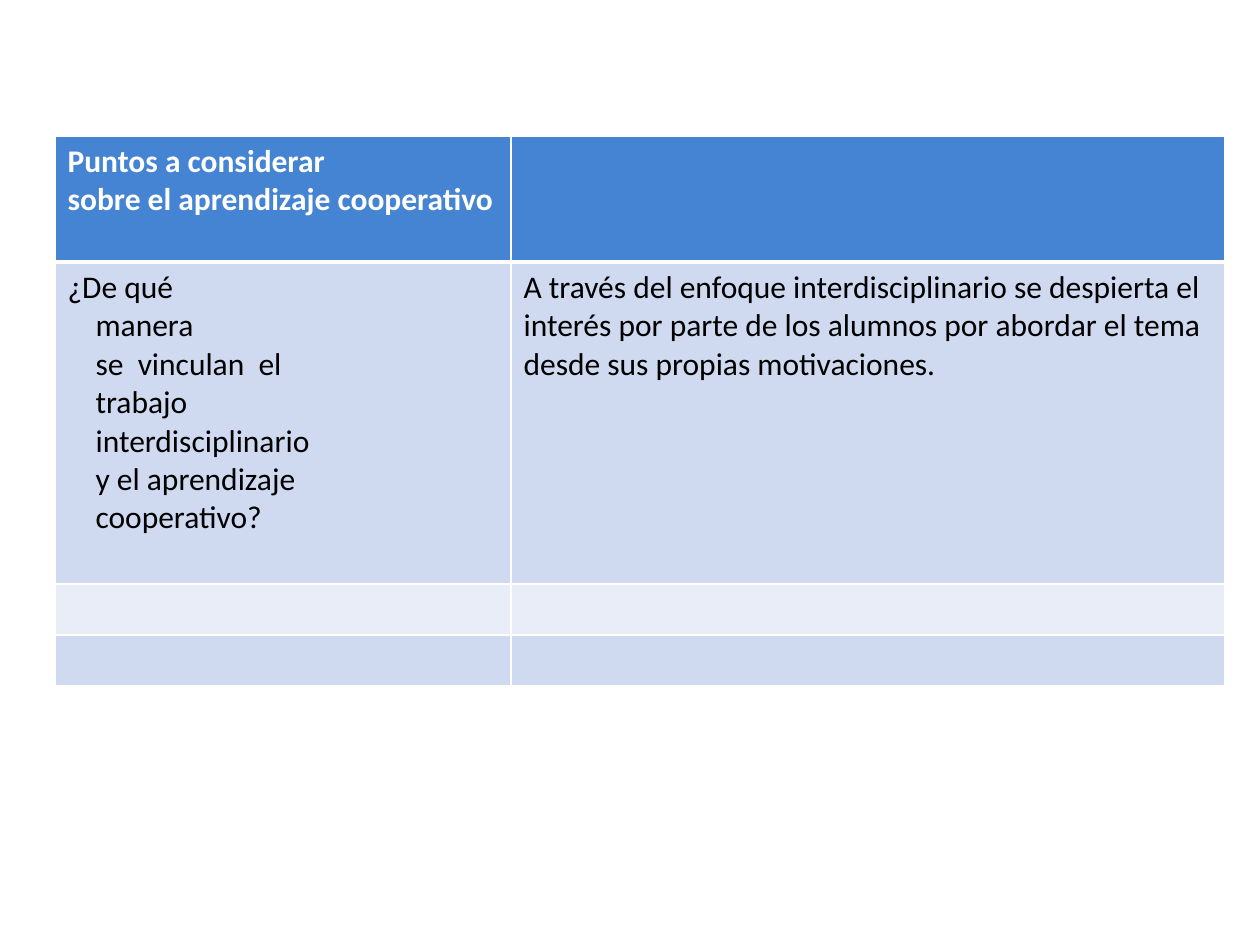
from lxml import etree
from pptx import Presentation, util as u
from pptx.dml.color import RGBColor
from pptx.oxml.ns import qn

PX = 914400 // 126
WHITE = RGBColor(0xFF, 0xFF, 0xFF)
BLACK = RGBColor(0, 0, 0)
BLUE = RGBColor(0x45, 0x84, 0xD3)
PALE = RGBColor(0xCF, 0xD9, 0xEF)
LIGHT = RGBColor(0xE9, 0xED, 0xF7)

HEAD = {"bold": True, "color": WHITE}
BODY = {"bold": False, "color": BLACK}
INDENT = 28

# Cell texts: one list of (indent, line) per cell
TOPIC = [(0, "Puntos a considerar"), (0, "sobre el aprendizaje cooperativo")]
QUERY = [(0, "¿De qué")] + [(INDENT, line) for line in (
    "manera", "se  vinculan  el", "trabajo", "interdisciplinario",
    "y el aprendizaje", "cooperativo?")]
REPLY = [(0, "A través del enfoque interdisciplinario se despierta el interés "
             "por parte de los alumnos por abordar el tema desde sus propias "
             "motivaciones.")]

# Rows: height, fill, text format, cells
ROWS = [
    (126, BLUE, HEAD, [TOPIC, []]),
    (322, PALE, BODY, [QUERY, REPLY]),
    (51, LIGHT, BODY, [[], []]),
    (51, PALE, BODY, [[], []]),
]


class Deck:
    font = {"name": "Calibri", "size": u.Pt(18)}

    def __init__(self, wide, high):
        self.prs = Presentation()
        self.prs.slide_width = wide * PX
        self.prs.slide_height = high * PX
        self.slide = self.prs.slides.add_slide(self.prs.slide_layouts[6])

    def table(self, left, top, cols, rows):
        high = sum(row[0] for row in rows)
        grid = self.slide.shapes.add_table(
            len(rows), len(cols), left * PX, top * PX,
            sum(cols) * PX, high * PX).table
        for col, wide in zip(grid.columns, cols):
            col.width = wide * PX
        for r, (tall, fill, form, cells) in enumerate(rows):
            grid.rows[r].height = tall * PX
            for c, lines in enumerate(cells):
                cell = grid.cell(r, c)
                # The rule below the header is thicker
                self.border(cell, top=3 if r == 1 else 1,
                            base=3 if r == 0 else 1)
                cell.fill.solid()
                cell.fill.fore_color.rgb = fill
                self.label(cell.text_frame, lines, form)

    def border(self, cell, top, base):
        props = cell._tc.get_or_add_tcPr()
        sides = {"lnL": 1, "lnR": 1, "lnT": top, "lnB": base}
        for side, size in sides.items():
            line = etree.SubElement(props, qn("a:" + side), w=str(u.Pt(size)))
            paint = etree.SubElement(line, qn("a:solidFill"))
            etree.SubElement(paint, qn("a:srgbClr"), val=str(WHITE))

    def label(self, frame, lines, form):
        for i, (indent, line) in enumerate(lines):
            para = frame.add_paragraph() if i else frame.paragraphs[0]
            if indent:
                para._p.get_or_add_pPr().set("marL", str(indent * PX))
            run = para.add_run()
            run.text = line
            for key, val in {**self.font, "bold": form["bold"]}.items():
                setattr(run.font, key, val)
            run.font.color.rgb = form["color"]


def main():
    deck = Deck(1260, 945)
    deck.table(55, 136, [456, 714], ROWS)
    deck.prs.save("out.pptx")


if __name__ == "__main__":
    main()
